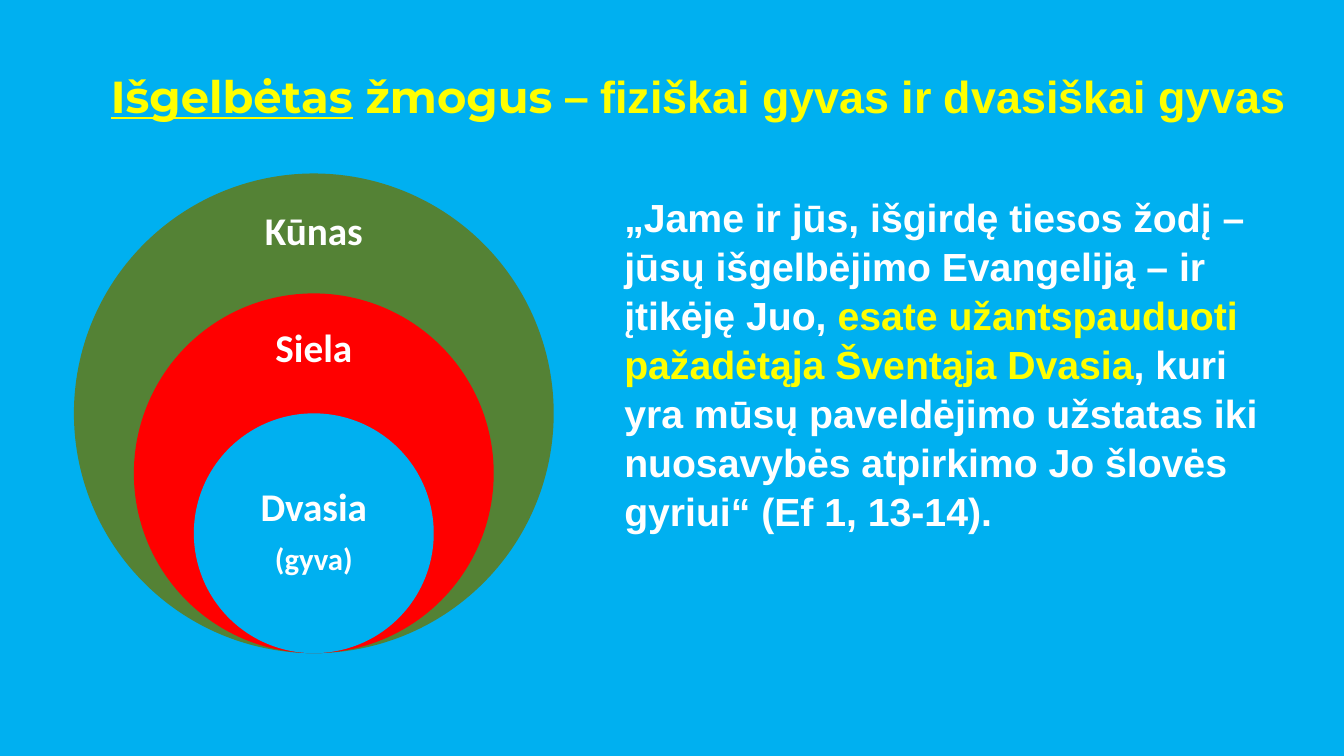
"""Build a slide with three nested circles beside a Bible verse."""
from dataclasses import dataclass

from pptx import Presentation, util as u
from pptx.dml.color import RGBColor
from pptx.enum import shapes, text

COLORS = {"sky": "00B0F0", "green": "548235", "red": "FF0000",
          "white": "FFFFFF", "yellow": "FFFF00"}
WIDTH, HEIGHT = u.Inches(13.33), u.Inches(7.5)
CENTER_X, BOTTOM, DIAMETER = 0.2335, 0.864, 0.357
LABEL_WIDTH = 0.126


@dataclass(frozen=True)
class Span:
    text: str
    size: float
    font: str
    color: str
    underline: bool = False


@dataclass(frozen=True)
class Ring:
    scale: float
    color: str
    label_top: float
    label_height: float
    lines: tuple[Span, ...]


@dataclass(frozen=True)
class Block:
    left: float
    top: float
    width: float
    height: float
    spacing: float
    spans: tuple[Span, ...]


RINGS = (
    Ring(1, "green", 0.26, 0.095, (Span("Kūnas", 28, "Calibri", "white"),)),
    Ring(0.75, "red", 0.417, 0.09, (Span("Siela", 28, "Calibri", "white"),)),
    Ring(0.5, "sky", 0.625, 0.159, (Span("Dvasia", 28, "Calibri", "white"),
                                    Span("(gyva)", 22, "Calibri", "white"))),
)
TITLE = Block(0.075, 0.084, 0.912, 0.085, 1, (
    Span("Išgelbėtas", 32, "Montserrat", "yellow", True),
    Span(" žmogus – ", 32, "Montserrat", "yellow"),
    Span("fiziškai gyvas ir dvasiškai gyvas", 32, "Arial", "yellow"),
))
VERSE = Block(0.457, 0.247, 0.5, 0.453, 1.04, (
    Span("„Jame ir jūs, išgirdę tiesos žodį – jūsų išgelbėjimo Evangeliją – "
         "ir įtikėję Juo, ", 28, "Arial", "white"),
    Span("esate užantspauduoti pažadėtąja Šventąja Dvasia", 28, "Arial", "yellow"),
    Span(", kuri yra mūsų paveldėjimo užstatas iki nuosavybės atpirkimo "
         "Jo šlovės gyriui“ (Ef 1, 13-14).", 28, "Arial", "white"),
))


def rgb(name: str) -> RGBColor:
    return RGBColor.from_string(COLORS[name])


def box(left: float, top: float, width: float, height: float) -> tuple[int, ...]:
    return (int(left * WIDTH), int(top * HEIGHT),
            int(width * WIDTH), int(height * HEIGHT))


def style_run(r, span: Span) -> None:
    r.font.size, r.font.name = u.Pt(span.size), span.font
    r.font.bold, r.font.underline = True, span.underline
    r.font.color.rgb = rgb(span.color)


def fill_placeholder(sp, block: Block) -> None:
    sp.left, sp.top, sp.width, sp.height = box(
        block.left, block.top, block.width, block.height)
    tf = sp.text_frame
    tf.word_wrap, tf.auto_size = True, text.MSO_AUTO_SIZE.NONE
    tf.vertical_anchor = text.MSO_ANCHOR.TOP
    p = tf.paragraphs[0]
    p.alignment, p.line_spacing = text.PP_ALIGN.LEFT, block.spacing
    p.space_before = u.Pt(0)
    pPr = p._p.get_or_add_pPr()
    pPr.set("marL", "0")
    pPr.set("indent", "0")
    pPr.append(pPr.makeelement(
        "{http://schemas.openxmlformats.org/drawingml/2006/main}buNone", {}))
    for span in block.spans:
        r = p.add_run()
        r.text = span.text
        style_run(r, span)


def draw_ring(s, ring: Ring) -> None:
    width = DIAMETER * ring.scale
    height = width * WIDTH / HEIGHT
    sp = s.shapes.add_shape(shapes.MSO_SHAPE.OVAL, *box(
        CENTER_X - width / 2, BOTTOM - height, width, height))
    sp.shadow.inherit = False
    sp.fill.solid()
    sp.fill.fore_color.rgb = rgb(ring.color)
    sp.line.fill.background()


def draw_label(s, ring: Ring) -> None:
    sp = s.shapes.add_textbox(*box(
        CENTER_X - LABEL_WIDTH / 2, ring.label_top, LABEL_WIDTH, ring.label_height))
    tf = sp.text_frame
    tf.word_wrap, tf.vertical_anchor = True, text.MSO_ANCHOR.MIDDLE
    tf.margin_left = tf.margin_right = u.Inches(0.22)
    tf.margin_top = tf.margin_bottom = u.Inches(0.22)
    tf.text = "\n".join(line.text for line in ring.lines)
    for p, line in zip(tf.paragraphs, ring.lines):
        p.alignment, p.line_spacing = text.PP_ALIGN.CENTER, 0.9
        p.space_after = u.Pt(10)
        style_run(p.runs[0], line)


def main() -> None:
    prs = Presentation()
    prs.slide_width, prs.slide_height = WIDTH, HEIGHT
    s = prs.slides.add_slide(prs.slide_layouts[1])
    s.background.fill.solid()
    s.background.fill.fore_color.rgb = rgb("sky")
    fill_placeholder(s.shapes.title, TITLE)
    fill_placeholder(s.placeholders[1], VERSE)
    for ring in RINGS:
        draw_ring(s, ring)
        draw_label(s, ring)
    prs.save("out.pptx")


if __name__ == "__main__":
    main()
